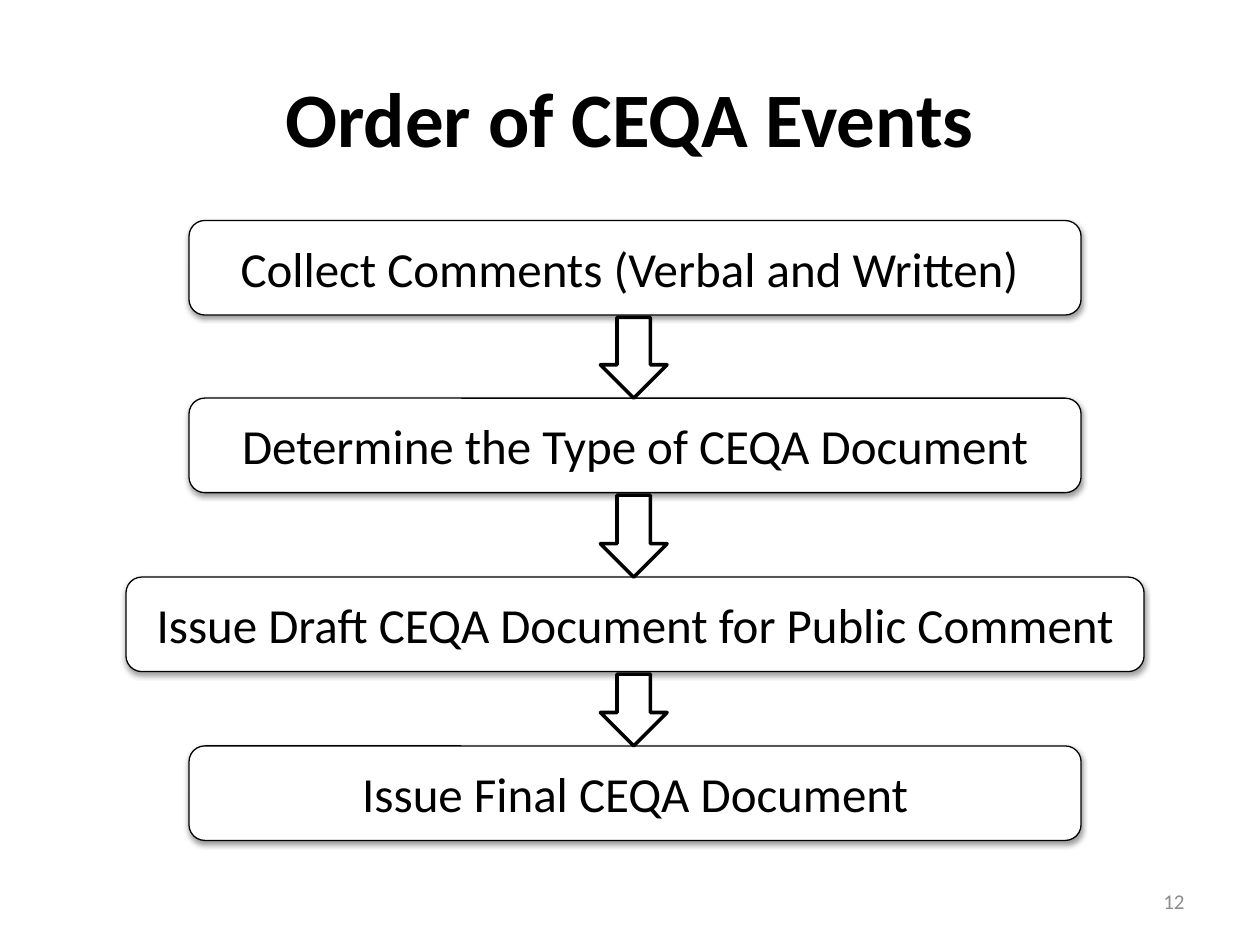
from lxml import etree
from pptx import Presentation
from pptx import util as u
from pptx.dml.color import RGBColor
from pptx.enum import shapes, text
from pptx.oxml import ns

BLACK = RGBColor(0x00, 0x00, 0x00)
WHITE = RGBColor(0xFF, 0xFF, 0xFF)
GRAY = RGBColor(0x8C, 0x8C, 0x8C)

MID = 5.04  # centre line of the boxes
HIGH = 0.75

# label, top, width
STEPS = [
    ("Collect Comments (Verbal and Written) ", 1.75, 7.08),
    ("Determine the Type of CEQA Document", 3.16, 7.08),
    ("Issue Draft CEQA Document for Public Comment", 4.58, 8.08),
    ("Issue Final CEQA Document", 5.92, 7.08),
]


class Deck:
    font = "Calibri"

    def __init__(self, prs):
        self.slide = prs.slides.add_slide(prs.slide_layouts[6])

    def fill_text(self, shape, words, size, color, align, bold=False):
        frame = shape.text_frame
        frame.word_wrap = True
        frame.vertical_anchor = text.MSO_ANCHOR.MIDDLE
        para = frame.paragraphs[0]
        para.text = words
        para.alignment = align
        para.font.name = self.font
        para.font.size = u.Pt(size)
        para.font.bold = bold
        para.font.color.rgb = color

    def label(self, words, x, y, w, h, size, color, align, bold=False):
        area = [u.Inches(n) for n in (x, y, w, h)]
        self.fill_text(self.slide.shapes.add_textbox(*area),
                       words, size, color, align, bold)

    def shape(self, kind, y, w, h, line, mid=MID):
        """Add a white outlined shape centred on the line x = mid."""
        area = [u.Inches(n) for n in (mid - w / 2, y, w, h)]
        item = self.slide.shapes.add_shape(kind, *area)
        item.fill.solid()
        item.fill.fore_color.rgb = WHITE
        item.line.color.rgb = BLACK
        item.line.width = u.Pt(line)
        item.shadow.inherit = False
        return item

    def box(self, words, y, w):
        item = self.shape(shapes.MSO_SHAPE.ROUNDED_RECTANGLE, y, w, HIGH, 0.75)
        self.shade(item)
        self.fill_text(item, words, 28, BLACK, text.PP_ALIGN.CENTER)

    def arrow(self, y, end):
        self.shape(shapes.MSO_SHAPE.DOWN_ARROW, y, 0.53, end - y, 2, 5.03)

    def shade(self, item):
        """Give the shape a soft shadow straight below it."""
        effects = item.element.spPr.find(ns.qn("a:effectLst"))
        shadow = etree.SubElement(
            effects, ns.qn("a:outerShdw"), blurRad=str(u.Pt(3.1)),
            dist=str(u.Pt(1.6)), dir="5400000", rotWithShape="0")
        color = etree.SubElement(shadow, ns.qn("a:srgbClr"), val=str(BLACK))
        etree.SubElement(color, ns.qn("a:alpha"), val="38000")


def main():
    prs = Presentation()
    prs.slide_width = u.Inches(10)
    prs.slide_height = u.Inches(7.5)
    deck = Deck(prs)

    deck.label("Order of CEQA Events", 0.5, 0.3, 9, 1.25, 44, BLACK,
               text.PP_ALIGN.CENTER, bold=True)
    for words, top, width in STEPS:
        deck.box(words, top, width)
    for (_, top, _), (_, end, _) in zip(STEPS, STEPS[1:]):
        deck.arrow(top + HIGH + 0.02, end)
    deck.label("12", 7.17, 6.95, 2.33, 0.4, 12, GRAY, text.PP_ALIGN.RIGHT)

    prs.save("out.pptx")


if __name__ == "__main__":
    main()
